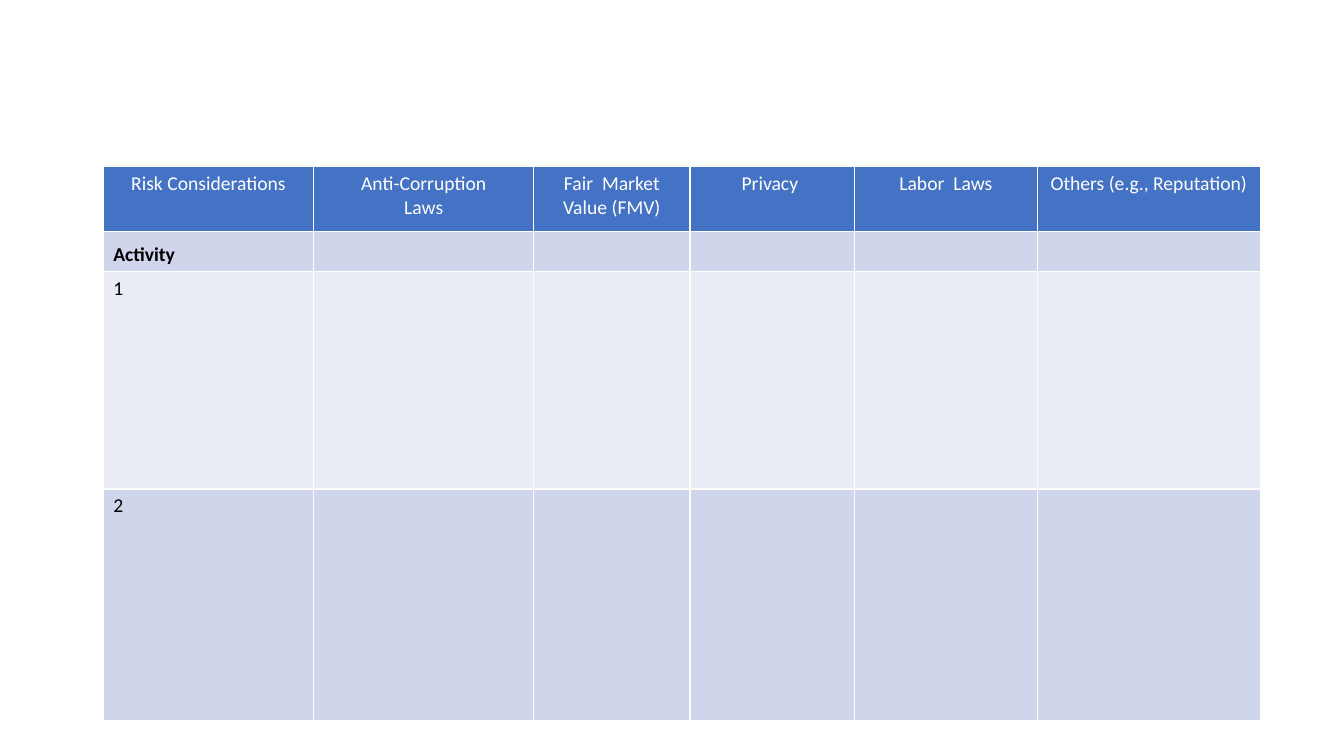
from lxml import etree
from pptx import Presentation
from pptx import util as u
from pptx.dml.color import RGBColor
from pptx.enum import text
from pptx.oxml.ns import qn

COLORS = {
    "header": "4472C4",
    "band_dark": "CFD5EA",
    "band_light": "E9EBF5",
    "border": "FFFFFF",
    "header_text": "FFFFFF",
    "body_text": "000000",
}
FONT = "Calibri"

HEADINGS = [
    "Risk Considerations",
    "Anti-Corruption\nLaws",
    "Fair  Market Value (FMV)",
    "Privacy ",
    "Labor  Laws",
    "Others (e.g., Reputation)",
]
ROW_LABELS = ["Activity", "1", "2"]
COLUMN_WIDTHS = [5.31, 5.54, 3.94, 4.14, 4.62, 5.61]
ROW_HEIGHTS = [1.63, 1.02, 5.47, 5.83]


def set_borders(cell, color, width):
    """Draw a solid line on all four sides; call before filling the cell."""
    properties = cell._tc.get_or_add_tcPr()
    for side in ("lnL", "lnR", "lnT", "lnB"):
        line = etree.SubElement(properties, qn("a:" + side), w=str(u.Pt(width)))
        fill = etree.SubElement(line, qn("a:solidFill"))
        etree.SubElement(fill, qn("a:srgbClr"), val=color)


def write_cell(cell, content, color="body_text", bold=False,
               align=text.PP_ALIGN.LEFT, anchor=text.MSO_ANCHOR.TOP):
    cell.text = content
    cell.vertical_anchor = anchor
    for paragraph in cell.text_frame.paragraphs:
        paragraph.alignment = align
        for font in [paragraph.font] + [run.font for run in paragraph.runs]:
            font.name = FONT
            font.size = u.Pt(14)
            font.bold = bold
            font.color.rgb = RGBColor.from_string(COLORS[color])


def add_risk_table(slide, left, top):
    rows = [HEADINGS] + [[label] + [""] * (len(HEADINGS) - 1) for label in ROW_LABELS]
    table = slide.shapes.add_table(
        len(rows), len(HEADINGS), left, top,
        u.Cm(sum(COLUMN_WIDTHS)), u.Cm(sum(ROW_HEIGHTS))).table
    for column, width in zip(table.columns, COLUMN_WIDTHS):
        column.width = u.Cm(width)
    for row, height in zip(table.rows, ROW_HEIGHTS):
        row.height = u.Cm(height)

    # Header, then alternating bands
    for row_index, labels in enumerate(rows):
        if row_index == 0:
            fill = "header"
            style = dict(color="header_text", align=text.PP_ALIGN.CENTER)
        else:
            fill = "band_dark" if row_index % 2 else "band_light"
            style = {}
            if labels[0] == "Activity":
                style = dict(bold=True, anchor=text.MSO_ANCHOR.BOTTOM)
        for column_index, label in enumerate(labels):
            cell = table.cell(row_index, column_index)
            set_borders(cell, COLORS["border"], 1)
            cell.fill.solid()
            cell.fill.fore_color.rgb = RGBColor.from_string(COLORS[fill])
            write_cell(cell, label, **style)


def main():
    presentation = Presentation()
    presentation.slide_width = u.Cm(33.87)
    presentation.slide_height = u.Cm(19.05)
    slide = presentation.slides.add_slide(presentation.slide_layouts[6])
    add_risk_table(slide, u.Cm(2.6), u.Cm(4.2))
    presentation.save("out.pptx")


if __name__ == "__main__":
    main()
